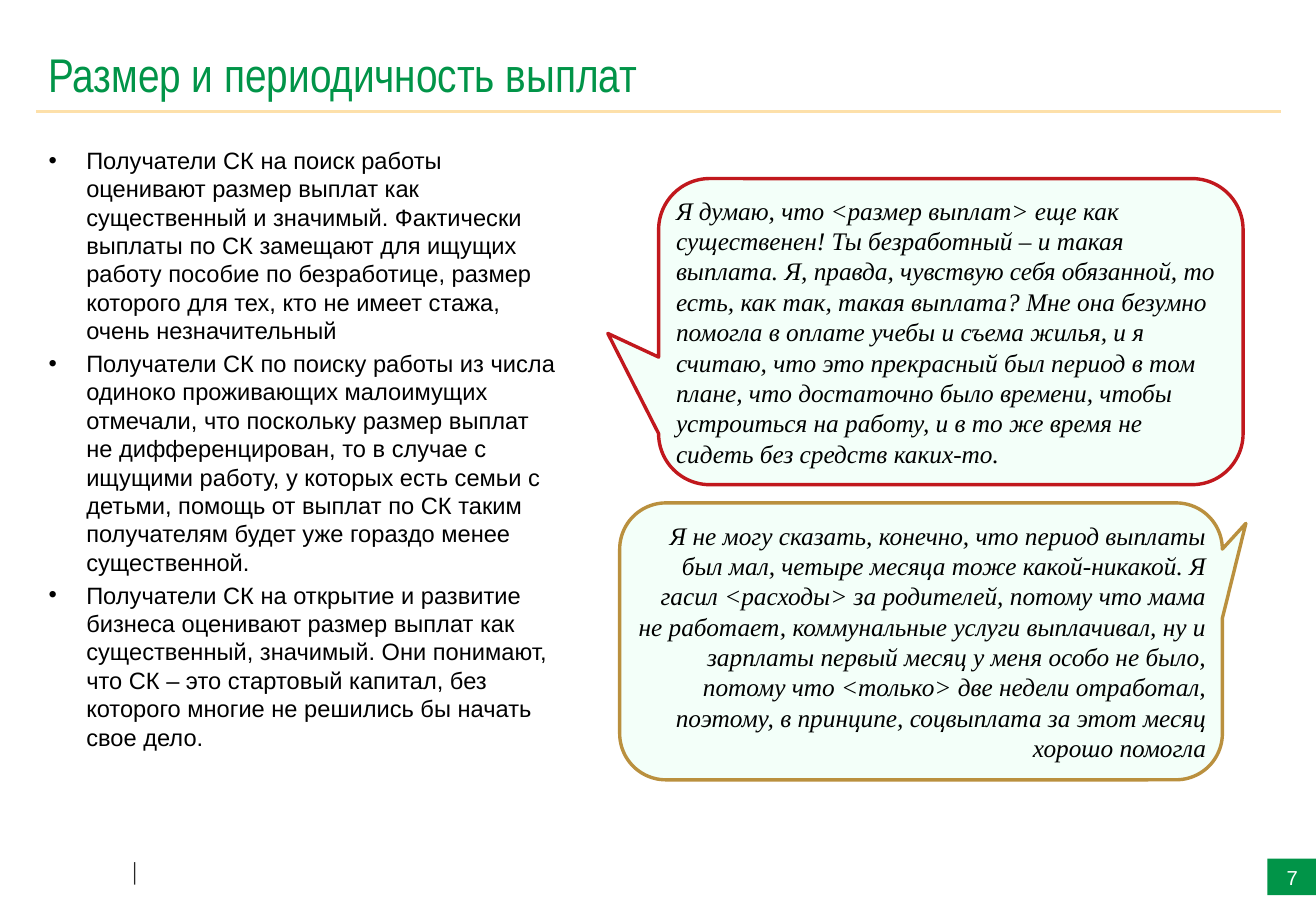
from lxml.etree import SubElement
from pptx import Presentation
from pptx.dml.color import RGBColor
from pptx.enum.shapes import MSO_CONNECTOR, MSO_SHAPE
from pptx.enum.text import MSO_ANCHOR, MSO_AUTO_SIZE, PP_ALIGN
from pptx.oxml.ns import qn
from pptx.util import Inches, Pt

GREEN = RGBColor(0x01, 0x94, 0x48)
SAND = RGBColor(0xFD, 0xE0, 0xAA)
MINT = RGBColor(0xF3, 0xFF, 0xF9)
RED = RGBColor(0xC1, 0x18, 0x1D)
GOLD = RGBColor(0xBA, 0x90, 0x3E)
DARK = RGBColor(0x26, 0x26, 0x26)
BLACK = RGBColor(0x00, 0x00, 0x00)
WHITE = RGBColor(0xFF, 0xFF, 0xFF)

TITLE = "Размер и периодичность выплат"
FINDINGS = [
    "Получатели СК на поиск работы оценивают размер выплат как существенный и значимый. "
    "Фактически выплаты по СК замещают для ищущих работу пособие по безработице, размер "
    "которого для тех, кто не имеет стажа, очень незначительный",
    "Получатели СК по поиску работы из числа одиноко проживающих малоимущих отмечали, что "
    "поскольку размер выплат не дифференцирован, то в случае с ищущими работу, у которых "
    "есть семьи с детьми, помощь от выплат по СК таким получателям будет уже гораздо менее "
    "существенной.",
    "Получатели СК на открытие и развитие бизнеса оценивают размер выплат как существенный, "
    "значимый. Они понимают, что СК – это стартовый капитал, без которого многие не решились "
    "бы начать свое дело.",
]
STUDY_QUOTE = (
    "Я думаю, что <размер выплат> еще как существенен! Ты безработный – и такая выплата. "
    "Я, правда, чувствую себя обязанной, то есть, как так, такая выплата? Мне она безумно "
    "помогла в оплате учебы и съема жилья, и я считаю, что это прекрасный был период в том "
    "плане, что достаточно было времени, чтобы устроиться на работу, и в то же время не "
    "сидеть без средств каких-то."
)
FAMILY_QUOTE = (
    "Я не могу сказать, конечно, что период выплаты был мал, четыре месяца тоже "
    "какой-никакой. Я гасил <расходы> за родителей, потому что мама не работает, "
    "коммунальные услуги выплачивал, ну и зарплаты первый месяц у меня особо не было, "
    "потому что <только> две недели отработал, поэтому, в принципе, соцвыплата за этот "
    "месяц хорошо помогла"
)


def add_bullet(p, indent):
    pPr = p._p.get_or_add_pPr()
    pPr.set("marL", str(indent))
    pPr.set("indent", str(-indent))
    SubElement(pPr, qn("a:buFont")).set("typeface", "Arial")
    SubElement(pPr, qn("a:buChar")).set("char", "•")


def write(tf, paragraphs, font="Arial", size=14, color=BLACK, italic=False,
          align=PP_ALIGN.LEFT, anchor=MSO_ANCHOR.TOP, inset=(0.1, 0.05),
          wrap=True, bullet=False, gap=0):
    tf.auto_size = MSO_AUTO_SIZE.NONE
    tf.word_wrap = wrap
    tf.vertical_anchor = anchor
    tf.margin_left = tf.margin_right = Inches(inset[0])
    tf.margin_top = tf.margin_bottom = Inches(inset[1])
    for i, text in enumerate(paragraphs):
        p = tf.add_paragraph() if i else tf.paragraphs[0]
        p.alignment = align
        p.space_before = Pt(gap if i else 0)
        if bullet:
            add_bullet(p, Inches(0.31))
        r = p.add_run()
        r.text = text
        r.font.name = font
        r.font.size = Pt(size)
        r.font.italic = italic
        r.font.color.rgb = color


def fill_placeholder(sp, box, paragraphs, **fmt):
    sp.left, sp.top, sp.width, sp.height = map(Inches, box)
    write(sp.text_frame, paragraphs, **fmt)


def add_box(s, kind, box, fill, line=None):
    sp = s.shapes.add_shape(kind, *map(Inches, box))
    sp.shadow.inherit = False
    sp.fill.solid()
    sp.fill.fore_color.rgb = fill
    if line is None:
        sp.line.fill.background()
    else:
        sp.line.color.rgb = line
        sp.line.width = Pt(2)
    return sp


def add_quote(s, box, text, line, tail, align):
    sp = add_box(s, MSO_SHAPE.ROUNDED_RECTANGULAR_CALLOUT, box, MINT, line)
    for i, value in enumerate((*tail, 0.167)):
        sp.adjustments[i] = value
    write(sp.text_frame, [text], font="Times New Roman", size=15, italic=True,
          align=align, anchor=MSO_ANCHOR.MIDDLE, inset=(0.02, 0.01))


def add_rule(s, left, right, y):
    line = s.shapes.add_connector(MSO_CONNECTOR.STRAIGHT, Inches(left), Inches(y),
                                  Inches(right), Inches(y))
    line.line.color.rgb = SAND
    line.line.width = Pt(1.5)
    SubElement(line._element.spPr, qn("a:effectLst"))


def main():
    prs = Presentation()
    prs.slide_width, prs.slide_height = Inches(10.83), Inches(7.5)
    s = prs.slides.add_slide(prs.slide_layouts[1])

    footer = s.shapes.add_textbox(*map(Inches, (0.97, 7.04, 0.3, 0.29)))
    write(footer.text_frame, ["│"], font="Arial Narrow", size=11, color=DARK, wrap=False)
    add_rule(s, 0.3, 10.54, 0.92)

    fill_placeholder(s.shapes.title, (0.3, 0.3, 10.24, 0.61), [TITLE],
                     font="Arial Narrow", size=28, color=GREEN, anchor=MSO_ANCHOR.MIDDLE)
    fill_placeholder(s.placeholders[1], (0.3, 1.15, 4.41, 5.75), FINDINGS,
                     bullet=True, gap=2.8)

    number = add_box(s, MSO_SHAPE.RECTANGLE, (10.43, 7.07, 0.41, 0.3), GREEN)
    write(number.text_frame, ["7"], size=12, color=WHITE, align=PP_ALIGN.CENTER,
          anchor=MSO_ANCHOR.MIDDLE)

    add_quote(s, (5.42, 1.47, 4.81, 2.52), STUDY_QUOTE, RED, (-0.587, 0.006), PP_ALIGN.LEFT)
    add_quote(s, (5.1, 4.14, 4.96, 2.28), FAMILY_QUOTE, GOLD, (0.539, -0.426), PP_ALIGN.RIGHT)

    prs.save("out.pptx")


if __name__ == "__main__":
    main()
